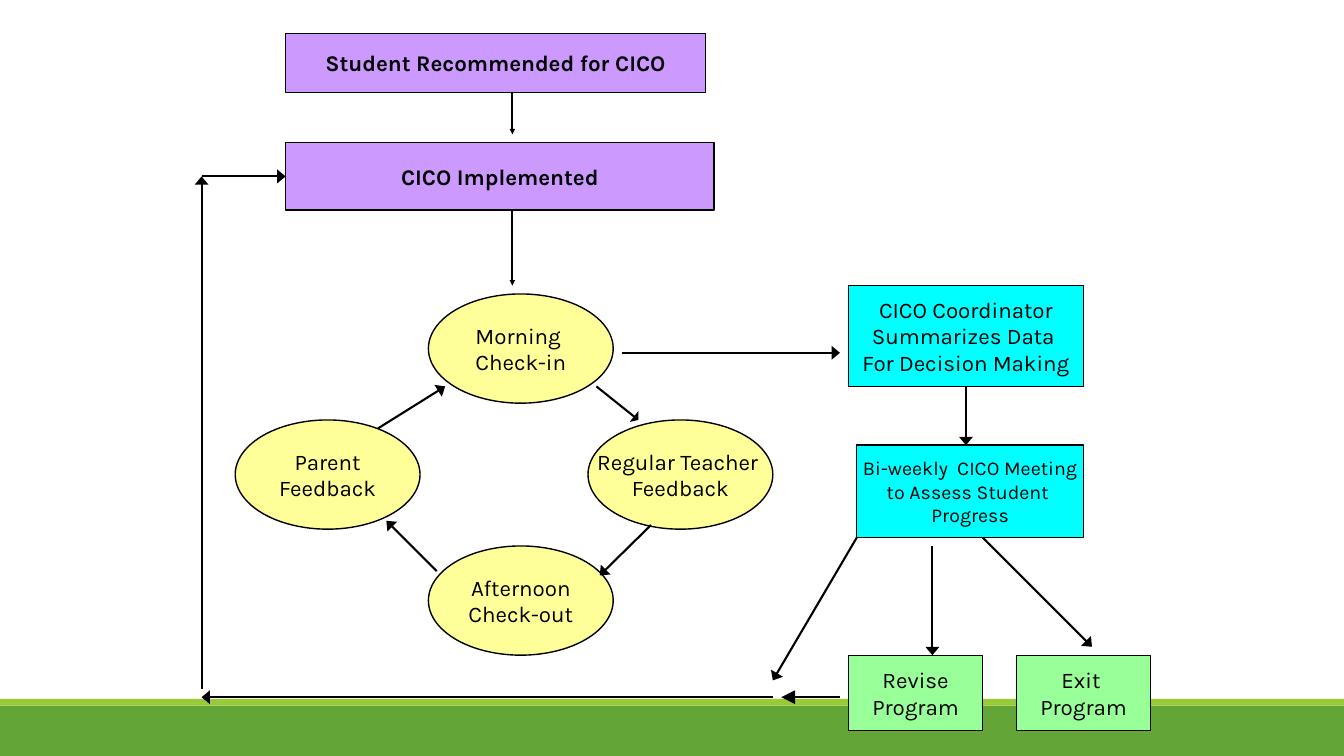
from dataclasses import dataclass

from lxml import etree
from pptx import Presentation
from pptx.dml.color import RGBColor
from pptx.enum.shapes import MSO_CONNECTOR, MSO_SHAPE
from pptx.enum.text import MSO_ANCHOR, PP_ALIGN
from pptx.oxml.ns import qn
from pptx.shapes.autoshape import Shape
from pptx.shapes.connector import Connector
from pptx.slide import Slide
from pptx.util import Inches, Length, Pt

RECT = MSO_SHAPE.RECTANGLE
OVAL = MSO_SHAPE.OVAL
STRAIGHT = MSO_CONNECTOR.STRAIGHT
MIDDLE = MSO_ANCHOR.MIDDLE
CENTER = PP_ALIGN.CENTER
LEFT_SIDE, BOTTOM_SIDE = 1, 2
CELLS_PER_INCH = 12
SLIDE_WIDTH, SLIDE_HEIGHT = 160, 90


@dataclass(frozen=True)
class Theme:
    font: str = "Karla"
    ink: str = "000000"
    start: str = "CC99FF"
    cycle: str = "FFFF99"
    review: str = "00FFFF"
    outcome: str = "99FF99"
    band: str = "63A537"
    band_edge: str = "99CB38"
    body: float = 16
    small: float = 14
    outline: float = 1
    arrow: float = 1.5


THEME = Theme()


@dataclass(frozen=True)
class Node:
    key: str
    left: float
    top: float
    width: float
    height: float
    fill: str
    lines: tuple[str, ...]
    kind: MSO_SHAPE = RECT
    size: float = THEME.body
    bold: bool = False


@dataclass(frozen=True)
class Arrow:
    x1: float
    y1: float
    x2: float
    y2: float
    head_width: str = "lg"
    head_length: str = "med"
    source: str = ""
    target: str = ""


def cycle_step(key: str, left: float, top: float, *lines: str) -> Node:
    return Node(key, left, top, 22, 13, THEME.cycle, lines, OVAL)


def outcome(key: str, left: float, *lines: str) -> Node:
    return Node(key, left, 78, 16, 9, THEME.outcome, lines)


NODES = (
    Node("recommended", 34, 4, 50, 7, THEME.start,
         ("Student Recommended for CICO",), bold=True),
    Node("implemented", 34, 17, 51, 8, THEME.start,
         ("CICO Implemented",), bold=True),
    cycle_step("parent", 28, 50, "Parent", "Feedback"),
    cycle_step("teacher", 70, 50, "Regular Teacher ", "Feedback"),
    cycle_step("afternoon", 51, 65, "Afternoon", "Check-out"),
    cycle_step("morning", 51, 35, "Morning ", "Check-in"),
    Node("coordinator", 101, 34, 28, 12, THEME.review,
         ("CICO Coordinator", "Summarizes Data ", "For Decision Making")),
    Node("meeting", 102, 53, 27, 11, THEME.review,
         ("Bi-weekly  CICO Meeting", "to Assess Student ", "Progress"),
         size=THEME.small),
    outcome("exit", 121, "Exit ", "Program"),
    outcome("revise", 101, "Revise", "Program"),
)

ARROWS = (
    Arrow(61, 11, 61, 16, "sm", "sm"),
    Arrow(61, 25, 61, 34, "sm", "sm"),
    Arrow(77.5, 62.5, 71.4, 68.5),
    Arrow(52, 68, 46, 62),
    Arrow(45, 51, 53, 46),
    Arrow(71, 46, 76, 50, head_length="sm"),
    Arrow(74, 42, 100, 42),
    Arrow(115, 46, 115, 53, source="coordinator"),
    Arrow(117, 64, 130, 77),
    Arrow(111, 65, 111, 78),
    Arrow(102, 64, 92, 81),
    Arrow(100, 83, 93, 83, head_length="lg"),
    Arrow(92, 83, 24, 83),
    Arrow(24, 82, 24, 21),
    Arrow(24, 21, 34, 21, target="implemented"),
)


def grid(cells: float) -> Length:
    return Inches(cells / CELLS_PER_INCH)


def rgb(value: str) -> RGBColor:
    return RGBColor.from_string(value)


def add_filled(s: Slide, kind: MSO_SHAPE, left: float, top: float,
               width: float, height: float, fill: str) -> Shape:
    sp = s.shapes.add_shape(kind, grid(left), grid(top),
                            grid(width), grid(height))
    sp.shadow.inherit = False
    sp.fill.solid()
    sp.fill.fore_color.rgb = rgb(fill)
    sp.line.fill.background()
    return sp


def add_node(s: Slide, node: Node) -> Shape:
    sp = add_filled(s, node.kind, node.left, node.top,
                    node.width, node.height, node.fill)
    sp.line.color.rgb = rgb(THEME.ink)
    sp.line.width = Pt(THEME.outline)
    tf = sp.text_frame
    tf.word_wrap = False
    tf.vertical_anchor = MIDDLE
    for i, line in enumerate(node.lines):
        p = tf.add_paragraph() if i else tf.paragraphs[0]
        p.alignment = CENTER
        r = p.add_run()
        r.text = line
        r.font.name = THEME.font
        r.font.size = Pt(node.size)
        r.font.bold = node.bold
        r.font.color.rgb = rgb(THEME.ink)
    return sp


def add_arrow(s: Slide, arrow: Arrow, shapes: dict[str, Shape]) -> Connector:
    cx = s.shapes.add_connector(STRAIGHT, grid(arrow.x1), grid(arrow.y1),
                                grid(arrow.x2), grid(arrow.y2))
    if arrow.source:
        cx.begin_connect(shapes[arrow.source], BOTTOM_SIDE)
    if arrow.target:
        cx.end_connect(shapes[arrow.target], LEFT_SIDE)
    cx.line.color.rgb = rgb(THEME.ink)
    cx.line.width = Pt(THEME.arrow)
    props = cx._element.spPr
    etree.SubElement(props.find(qn("a:ln")), qn("a:tailEnd"), type="triangle",
                     w=arrow.head_width, len=arrow.head_length)
    etree.SubElement(props, qn("a:effectLst"))
    return cx


def main() -> None:
    prs = Presentation()
    prs.slide_width, prs.slide_height = grid(SLIDE_WIDTH), grid(SLIDE_HEIGHT)
    s = prs.slides.add_slide(prs.slide_layouts[6])
    add_filled(s, RECT, 0, 84, SLIDE_WIDTH, 6, THEME.band)
    add_filled(s, RECT, 0, 83.2, SLIDE_WIDTH, 0.8, THEME.band_edge)
    shapes = {node.key: add_node(s, node) for node in NODES}
    for arrow in ARROWS:
        add_arrow(s, arrow, shapes)
    prs.save("out.pptx")


if __name__ == "__main__":
    main()
